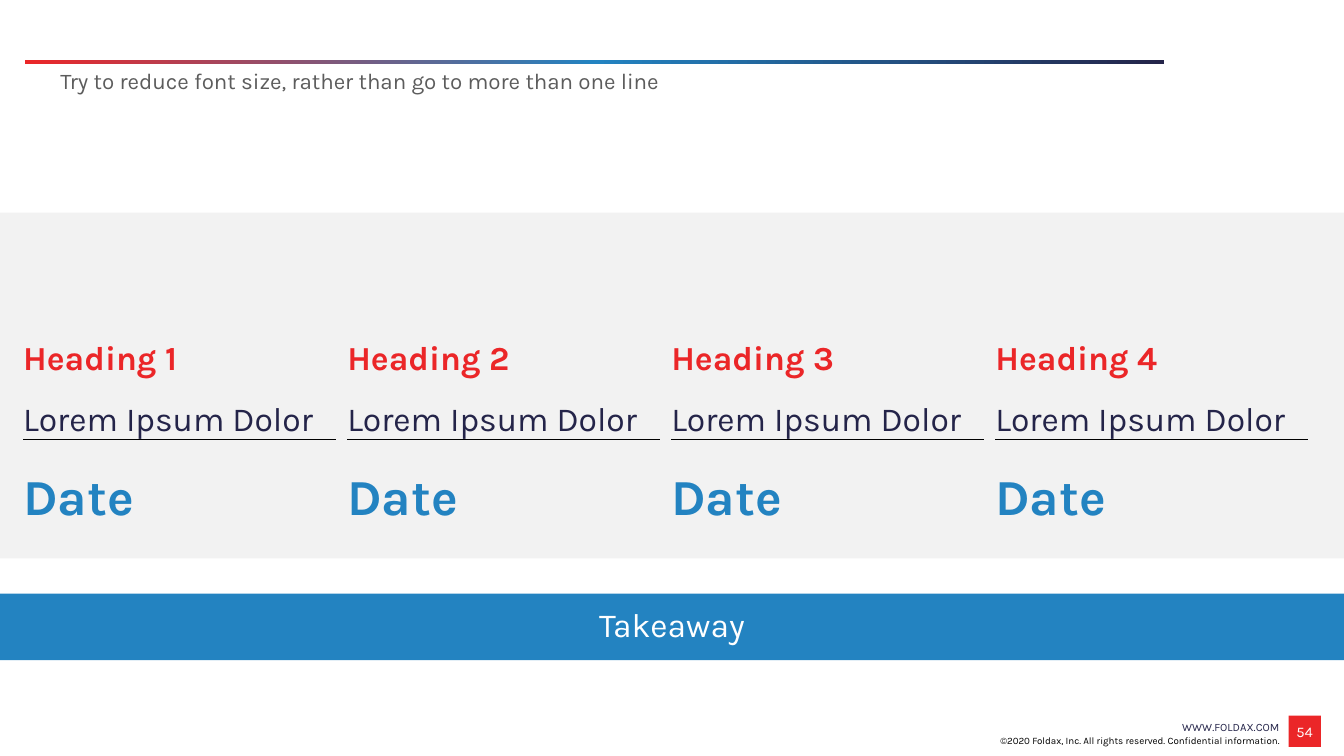
from lxml import etree
from pptx import Presentation
from pptx import util as u
from pptx.dml.color import RGBColor
from pptx.enum import shapes, text
from pptx.oxml import ns

Inches, Pt = u.Inches, u.Pt
ALIGN, ANCHOR = text.PP_ALIGN, text.MSO_ANCHOR

FONT = "Karla"
RED = RGBColor(0xEB, 0x26, 0x28)
BLUE = RGBColor(0x23, 0x83, 0xC1)
NAVY = RGBColor(0x24, 0x24, 0x49)
GREY = RGBColor(0x5C, 0x5C, 0x5C)
PALE = RGBColor(0xF2, 0xF2, 0xF2)
BLACK = RGBColor(0, 0, 0)
WHITE = RGBColor(0xFF, 0xFF, 0xFF)

SLIDE_WIDTH = 13.33
COLUMN_LEFT, COLUMN_STEP, COLUMN_WIDTH = 0.23, 3.214, 3.1
ROW_HEIGHTS = (1.2, 0.51, 0.41)


def write(frame, words, size, color, align=ALIGN.LEFT, bold=False):
    """Put one styled paragraph in a text frame and return it."""
    paragraph = frame.paragraphs[0]
    paragraph.text = words
    paragraph.alignment = align
    font = paragraph.font
    font.name, font.size, font.bold = FONT, Pt(size), bold
    font.color.rgb = color
    return paragraph


def add_bar(slide, left, top, width, height, color=None):
    """Add a rectangle without outline; no color means the brand gradient."""
    bar = slide.shapes.add_shape(shapes.MSO_SHAPE.RECTANGLE, Inches(left),
                                 Inches(top), Inches(width), Inches(height))
    bar.shadow.inherit = False
    bar.line.fill.background()
    if color is not None:
        bar.fill.solid()
        bar.fill.fore_color.rgb = color
        return bar
    bar.fill.gradient()
    bar.fill.gradient_angle = 0
    stops = bar.fill._fill._gradFill.find(ns.qn("a:gsLst"))
    for stop in list(stops):
        stops.remove(stop)
    for position, stop_color in ((0, RED), (50, BLUE), (100, NAVY)):
        stop = etree.SubElement(stops, ns.qn("a:gs"), pos=str(position * 1000))
        etree.SubElement(stop, ns.qn("a:srgbClr"), val=str(stop_color))
    return bar


def add_text(slide, left, top, width, height, words, size, color,
             align, anchor):
    box = slide.shapes.add_textbox(Inches(left), Inches(top),
                                   Inches(width), Inches(height))
    frame = box.text_frame
    frame.word_wrap = True
    frame.vertical_anchor = anchor
    return write(frame, words, size, color, align)


def set_borders(cell, ruled_side):
    """Clear the cell's borders, except a black rule on one side."""
    properties = cell._tc.get_or_add_tcPr()
    for index, side in enumerate(("lnL", "lnR", "lnT", "lnB")):
        line = etree.Element(ns.qn("a:" + side), w=str(Pt(1)))
        if side == ruled_side:
            fill = etree.SubElement(line, ns.qn("a:solidFill"))
            etree.SubElement(fill, ns.qn("a:srgbClr"), val=str(BLACK))
        else:
            etree.SubElement(line, ns.qn("a:noFill"))
        properties.insert(index, line)


def add_milestone(slide, left, heading):
    """Add a one-column table: heading, ruled description, date."""
    table = slide.shapes.add_table(
        len(ROW_HEIGHTS), 1, Inches(left), Inches(2.56),
        Inches(COLUMN_WIDTH), Inches(sum(ROW_HEIGHTS))).table
    table.first_row = table.horz_banding = False
    rows = (
        (heading, 24, RED, True, 6, ANCHOR.BOTTOM, None),
        ("Lorem Ipsum Dolor", 24, NAVY, False, 0, ANCHOR.BOTTOM, "lnB"),
        ("Date", 36, BLUE, True, 12, ANCHOR.TOP, "lnT"),
    )
    for index, (words, size, color, bold, after, anchor, rule) in enumerate(rows):
        table.rows[index].height = Inches(ROW_HEIGHTS[index])
        cell = table.cell(index, 0)
        cell.fill.background()
        cell.margin_left = cell.margin_right = 0
        cell.margin_top = cell.margin_bottom = 0
        cell.vertical_anchor = anchor
        paragraph = write(cell.text_frame, words, size, color, bold=bold)
        paragraph.line_spacing = 1.5
        paragraph.space_after = Pt(after)
        set_borders(cell, rule)


def main():
    presentation = Presentation()
    presentation.slide_width = Inches(SLIDE_WIDTH)
    presentation.slide_height = Inches(7.5)
    slide = presentation.slides.add_slide(presentation.slide_layouts[6])

    # Header rule and background band
    add_text(slide, 10.45, 7.04, 2.34, 0.34, "WWW.FOLDAX.COM", 8, NAVY,
             ALIGN.RIGHT, ANCHOR.MIDDLE)
    add_bar(slide, 0.25, 0.6, 11.3, 0.04)
    add_bar(slide, 0, 2.11, SLIDE_WIDTH, 3.43, PALE)

    # Footer and page number
    add_text(slide, 8.29, 7.05, 4.5, 0.4,
             "©2020 Foldax, Inc. All rights reserved. Confidential information.",
             7, BLACK, ALIGN.RIGHT, ANCHOR.BOTTOM)
    page = add_bar(slide, 12.78, 7.1, 0.32, 0.31, RED).text_frame
    page.margin_left = page.margin_right = Inches(0.02)
    page.margin_top = page.margin_bottom = Inches(0.02)
    page.vertical_anchor = ANCHOR.MIDDLE
    write(page, "54", 10.5, WHITE, ALIGN.CENTER)

    # Subtitle
    subtitle = add_text(
        slide, 0.5, 0.62, 10.82, 0.35,
        "Try to reduce font size, rather than go to more than one line",
        16, GREY, ALIGN.LEFT, ANCHOR.TOP)
    subtitle.space_after = Pt(6)

    # Takeaway banner
    banner = add_bar(slide, 0, 5.89, SLIDE_WIDTH, 0.66, BLUE).text_frame
    banner.vertical_anchor = ANCHOR.MIDDLE
    write(banner, "Takeaway", 24, WHITE, ALIGN.CENTER).line_spacing = 0.9

    # Four milestone columns
    for column in range(4):
        add_milestone(slide, COLUMN_LEFT + column * COLUMN_STEP,
                      f"Heading {column + 1}")

    presentation.save("out.pptx")


if __name__ == "__main__":
    main()
